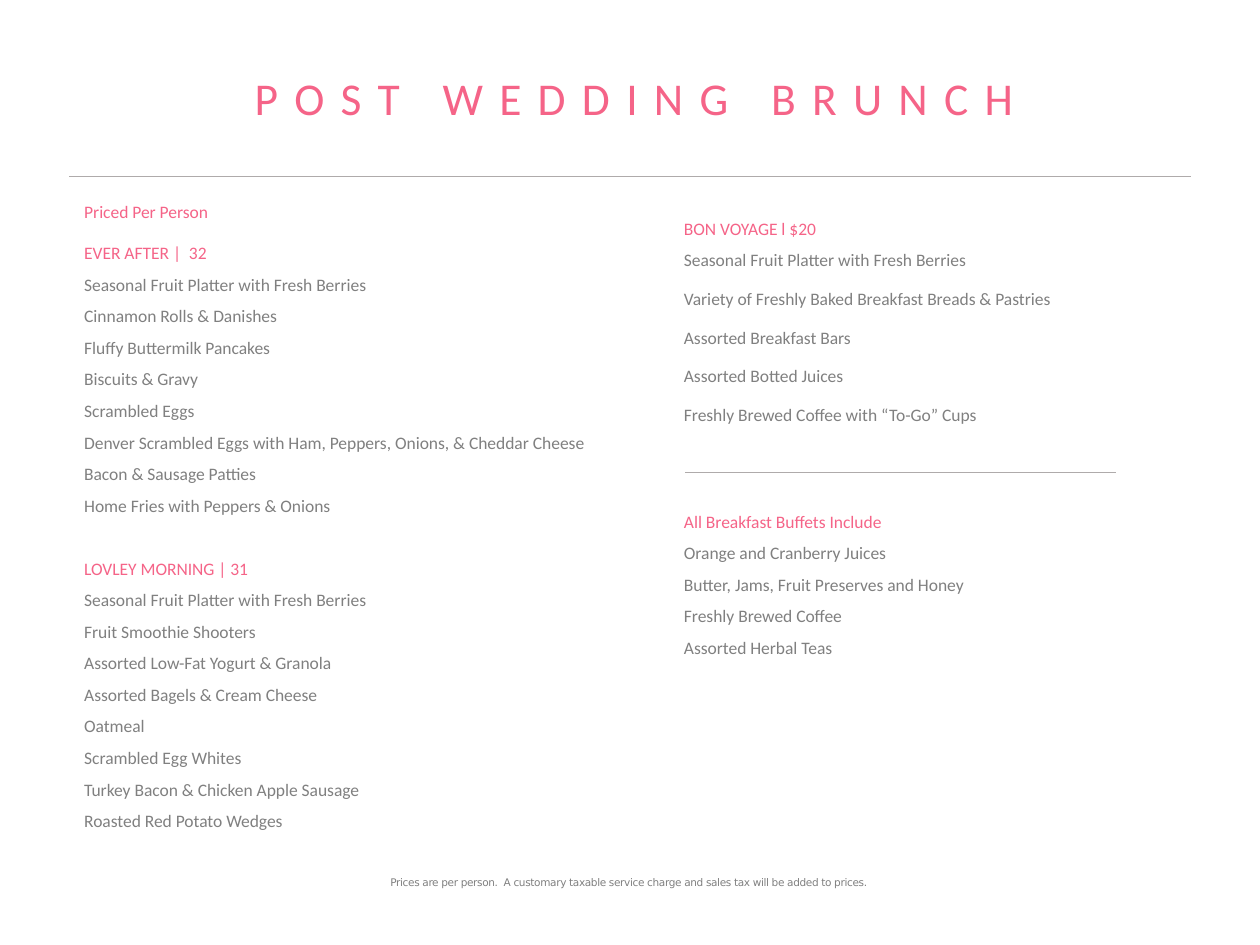
from lxml import etree
from pptx import Presentation
from pptx.dml.color import RGBColor
from pptx.enum.shapes import MSO_CONNECTOR as CONNECTOR
from pptx.enum.text import PP_ALIGN as ALIGN
from pptx.oxml.ns import qn
from pptx.util import Inches, Pt

COLORS = {"pink": "F56488", "gray": "808080", "rule": "AFABAB"}

EVER_AFTER = ("EVER AFTER |  32", [
    "Seasonal Fruit Platter with Fresh Berries",
    "Cinnamon Rolls & Danishes",
    "Fluffy Buttermilk Pancakes",
    "Biscuits & Gravy",
    "Scrambled Eggs",
    "Denver Scrambled Eggs with Ham, Peppers, Onions, & Cheddar Cheese",
    "Bacon & Sausage Patties",
    "Home Fries with Peppers & Onions",
])
LOVELY_MORNING = ("LOVLEY MORNING | 31", [
    "Seasonal Fruit Platter with Fresh Berries",
    "Fruit Smoothie Shooters",
    "Assorted Low-Fat Yogurt & Granola",
    "Assorted Bagels & Cream Cheese",
    "Oatmeal",
    "Scrambled Egg Whites",
    "Turkey Bacon & Chicken Apple Sausage",
    "Roasted Red Potato Wedges",
])
BON_VOYAGE = ("BON VOYAGE l $20", [
    "Seasonal Fruit Platter with Fresh Berries",
    "Variety of Freshly Baked Breakfast Breads & Pastries",
    "Assorted Breakfast Bars",
    "Assorted Botted Juices",
    "Freshly Brewed Coffee with “To-Go” Cups",
])
INCLUDED = ("All Breakfast Buffets Include", [
    "Orange and Cranberry Juices",
    "Butter, Jams, Fruit Preserves and Honey",
    "Freshly Brewed Coffee",
    "Assorted Herbal Teas",
])


def add_frame(slide, box):
    frame = slide.shapes.add_textbox(*map(Inches, box)).text_frame
    frame.word_wrap = True
    return frame


def style(paragraph, color, size=10, font="Calibri", tracking=None):
    for run in paragraph.runs:
        run.font.size = Pt(size)
        run.font.name = font
        run.font.color.rgb = RGBColor.from_string(COLORS[color])
        if tracking is not None:
            run.font._element.set("spc", str(round(tracking * 100)))


def add_rule(slide, left, right, y):
    rule = slide.shapes.add_connector(
        CONNECTOR.STRAIGHT, Inches(left), Inches(y), Inches(right), Inches(y))
    rule.line.color.rgb = RGBColor.from_string(COLORS["rule"])
    rule.line.width = Pt(1)
    etree.SubElement(rule._element.spPr, qn("a:effectLst"))


def add_title(slide, box):
    frame = add_frame(slide, box)
    frame.text = "POST WEDDING BRUNCH"
    title = frame.paragraphs[0]
    title.alignment = ALIGN.CENTER
    style(title, "pink", size=26, tracking=9.3)


def add_menu(slide, box, sections, heading_spacing=1.5, item_gap=0):
    """Stack sections of a pink heading and gray items, one line apart."""
    frame = add_frame(slide, box)
    for number, (heading, items) in enumerate(sections):
        head = frame.add_paragraph() if number else frame.paragraphs[0]
        head.text = heading
        head.line_spacing = heading_spacing
        if number:
            head.space_before = Pt(18)
        style(head, "pink")
        for item in items:
            dish = frame.add_paragraph()
            dish.text = item
            dish.line_spacing = 1.5
            dish.space_after = Pt(item_gap)
            style(dish, "gray")


def add_footer(slide, box):
    frame = add_frame(slide, box)
    frame.margin_left = frame.margin_right = frame.margin_bottom = 0
    frame.margin_top = Inches(0.01)
    frame.text = ("Prices are per person.  A customary taxable service charge "
                  "and sales tax will be added to prices. ")
    note = frame.paragraphs[0]
    note.alignment = ALIGN.CENTER
    note.space_before = Pt(1)
    style(note, "gray", size=6, font="DejaVu Sans", tracking=-0.2)


def main():
    deck = Presentation()
    deck.slide_width, deck.slide_height = Inches(10), Inches(7.5)
    slide = deck.slides.add_slide(deck.slide_layouts[6])

    # Heading
    add_title(slide, (0.05, 0.51, 9.97, 0.8))
    add_rule(slide, 0.55, 9.45, 1.4)

    # Left column
    add_menu(slide, (0.57, 1.46, 3, 0.35), [("Priced Per Person", [])])
    add_menu(slide, (0.57, 1.79, 4.6, 5), [EVER_AFTER, LOVELY_MORNING])

    # Right column
    add_menu(slide, (5.33, 1.68, 4.6, 1.72), [BON_VOYAGE],
             heading_spacing=1, item_gap=4)
    add_rule(slide, 5.44, 8.86, 3.75)
    add_menu(slide, (5.33, 3.92, 3.31, 1.33), [INCLUDED])

    # Footer
    add_footer(slide, (0, 6.94, 10, 0.12))

    deck.save("out.pptx")


if __name__ == "__main__":
    main()
